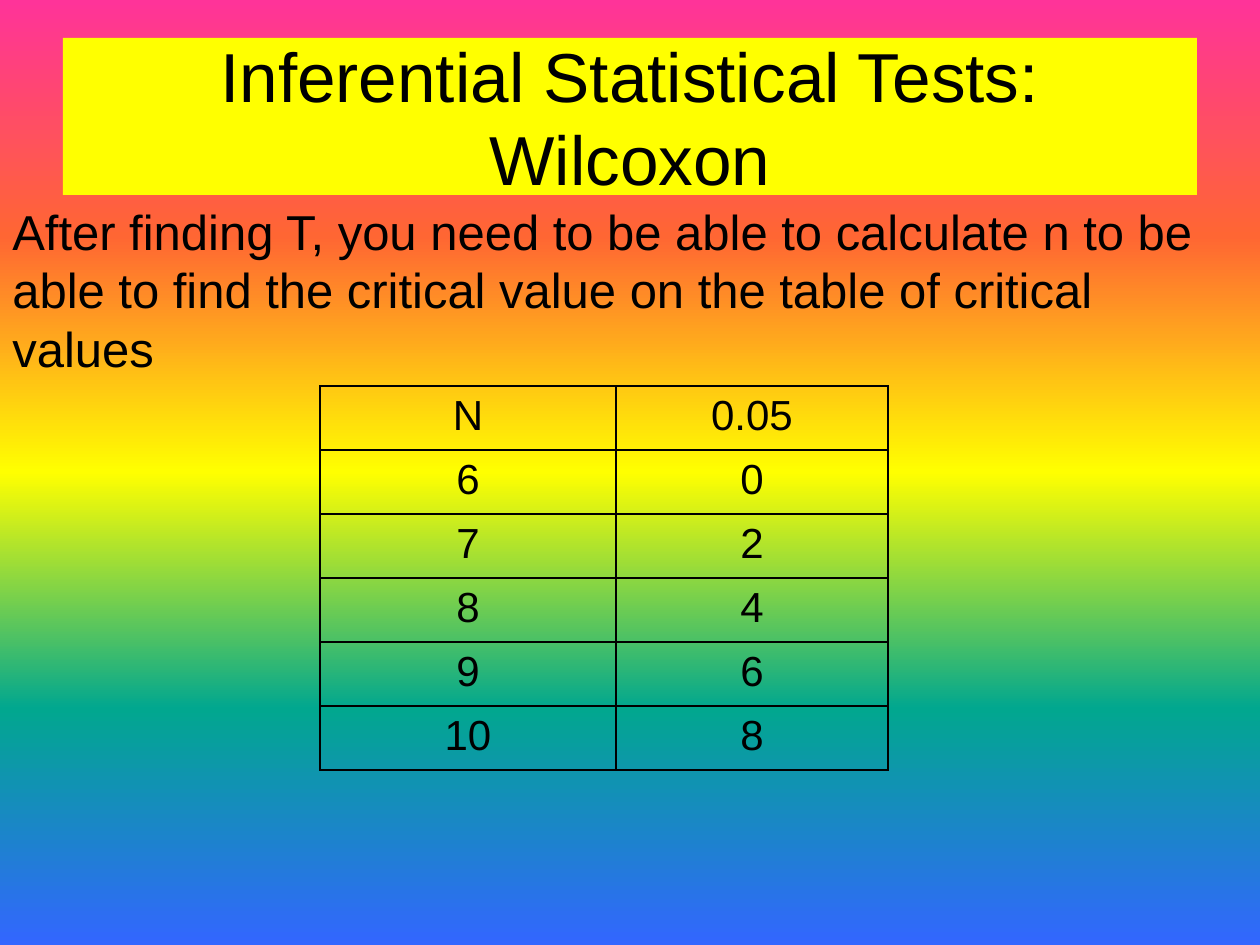
from dataclasses import dataclass

from lxml.etree import SubElement
from pptx import Presentation
from pptx.dml.color import RGBColor
from pptx.enum.text import MSO_ANCHOR as Anchor, MSO_AUTO_SIZE as AutoSize, PP_ALIGN as Align
from pptx.oxml.ns import qn
from pptx.util import Pt

TITLE = "Inferential Statistical Tests: Wilcoxon"
EXPLANATION = (
    "After finding T, you need to be able to calculate n to be able to find "
    "the critical value on the table of critical values"
)
CRITICAL_VALUES = [
    ("N", "0.05"),
    ("6", "0"),
    ("7", "2"),
    ("8", "4"),
    ("9", "6"),
    ("10", "8"),
]

SLIDE_SIZE = (1260, 945)
TITLE_BOX = (63, 38, 1134, 157)
EXPLANATION_BOX = (0, 195, 1208, 190)
TABLE_ORIGIN = (320, 386)
COLUMN_WIDTHS = (296, 272)
ROW_HEIGHT = 64
CELL_MARGIN = 9


@dataclass(frozen=True)
class Theme:
    font: str = "Arial"
    ink: str = "000000"
    title_fill: str = "FFFF00"
    rainbow: tuple = ("FF3399", "FF6633", "FFFF00", "01A78F", "3366FF")
    title_size: float = 39.6
    body_size: int = 28
    table_size: int = 24
    border: int = 1


THEME = Theme()


def px(length):
    return round(length * 914400 / 126)


def paint_background(slide):
    fill = slide.background.fill
    fill.gradient()
    fill.gradient_angle = 270
    stops = slide.element.find(".//" + qn("a:gsLst"))
    for stop in list(stops):
        stops.remove(stop)
    for index, color in enumerate(THEME.rainbow):
        position = index * 100000 // (len(THEME.rainbow) - 1)
        stop = SubElement(stops, qn("a:gs"), pos=str(position))
        SubElement(stop, qn("a:srgbClr"), val=color)


def write(text_frame, text, size, align=Align.LEFT):
    paragraph = text_frame.paragraphs[0]
    paragraph.alignment = align
    run = paragraph.add_run()
    run.text = text
    run.font.name = THEME.font
    run.font.size = Pt(size)
    run.font.color.rgb = RGBColor.from_string(THEME.ink)
    return paragraph


def add_text(slide, box, text, size, align=Align.LEFT):
    shape = slide.shapes.add_textbox(*map(px, box))
    shape.text_frame.word_wrap = True
    write(shape.text_frame, text, size, align)
    return shape


def add_borders(cell):
    properties = cell._tc.get_or_add_tcPr()
    for side in ("lnL", "lnR", "lnT", "lnB"):
        line = SubElement(properties, qn(f"a:{side}"), w=str(Pt(THEME.border)))
        fill = SubElement(line, qn("a:solidFill"))
        SubElement(fill, qn("a:srgbClr"), val=THEME.ink)


def add_critical_values(slide):
    row_count, column_count = len(CRITICAL_VALUES), len(COLUMN_WIDTHS)
    size = (sum(COLUMN_WIDTHS), row_count * ROW_HEIGHT)
    frame = slide.shapes.add_table(row_count, column_count, *map(px, TABLE_ORIGIN + size))
    table = frame.table
    table.first_row = table.horz_banding = False
    for column, width in zip(table.columns, COLUMN_WIDTHS):
        column.width = px(width)
    for row, values in zip(table.rows, CRITICAL_VALUES):
        row.height = px(ROW_HEIGHT)
        for cell, value in zip(row.cells, values):
            cell.margin_left = cell.margin_right = px(CELL_MARGIN)
            cell.margin_top = cell.margin_bottom = 0
            add_borders(cell)
            cell.fill.background()
            paragraph = write(cell.text_frame, value, THEME.table_size, Align.CENTER)
            paragraph.line_spacing = 1.15


def main():
    presentation = Presentation()
    presentation.slide_width, presentation.slide_height = map(px, SLIDE_SIZE)
    slide = presentation.slides.add_slide(presentation.slide_layouts[6])
    paint_background(slide)

    title = add_text(slide, TITLE_BOX, TITLE, THEME.title_size, Align.CENTER)
    title.fill.solid()
    title.fill.fore_color.rgb = RGBColor.from_string(THEME.title_fill)
    title.text_frame.vertical_anchor = Anchor.MIDDLE

    explanation = add_text(slide, EXPLANATION_BOX, EXPLANATION, THEME.body_size)
    explanation.text_frame.auto_size = AutoSize.SHAPE_TO_FIT_TEXT

    add_critical_values(slide)
    presentation.save("out.pptx")


if __name__ == "__main__":
    main()
